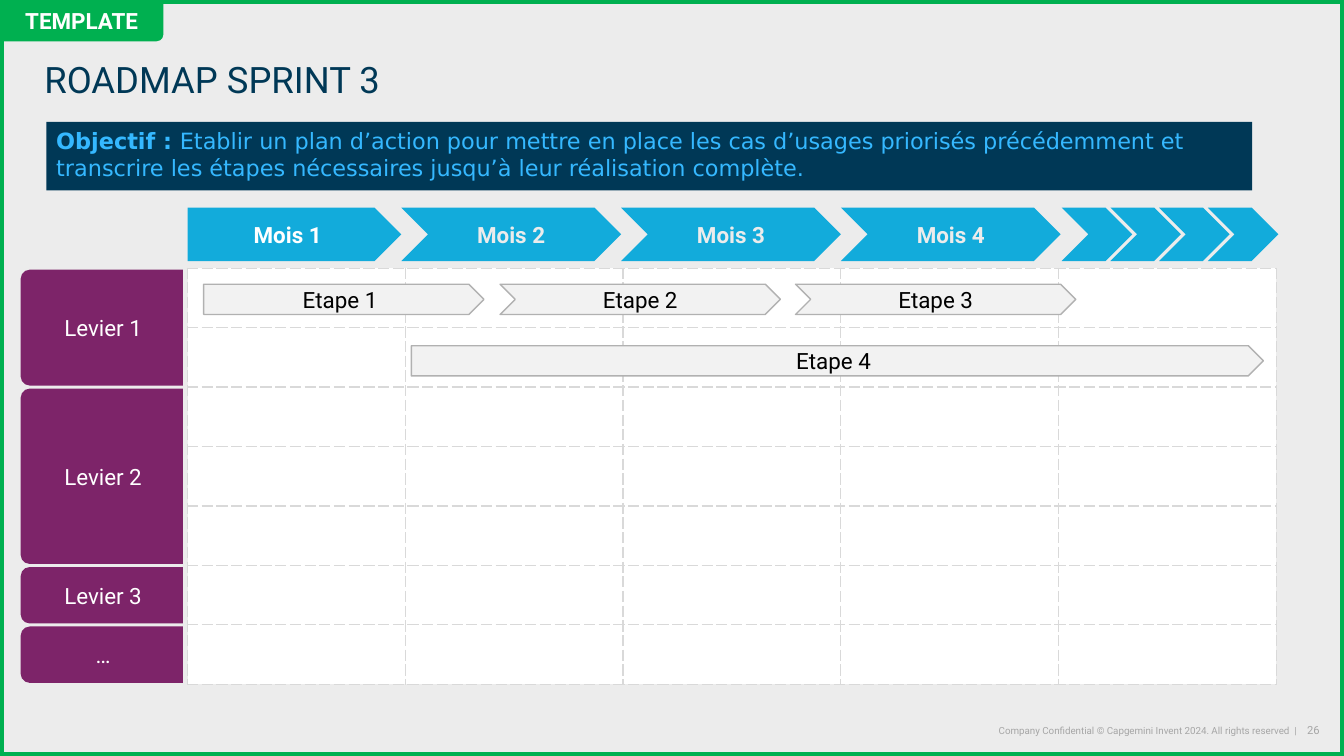
from lxml import etree
from pptx import Presentation
from pptx.dml.color import RGBColor
from pptx.enum.shapes import MSO_SHAPE
from pptx.enum.text import MSO_ANCHOR, PP_ALIGN
from pptx.oxml.ns import qn
from pptx.util import Inches, Pt

RECT, PLATE, CHEVRON = MSO_SHAPE.RECTANGLE, MSO_SHAPE.PENTAGON, MSO_SHAPE.CHEVRON
TAB, BADGE = MSO_SHAPE.ROUND_2_SAME_RECTANGLE, MSO_SHAPE.ROUND_2_DIAG_RECTANGLE
MIDDLE, TOP = MSO_ANCHOR.MIDDLE, MSO_ANCHOR.TOP
LEFT, CENTER, RIGHT = PP_ALIGN.LEFT, PP_ALIGN.CENTER, PP_ALIGN.RIGHT

THEME = dict(
    font="Roboto", objective_font="DejaVu Sans",
    title=26, body=16, page=8, legal=7,
    background="ECECEC", navy="003856", sky="35B8FF", cyan="12ABDB",
    purple="7D2469", green="00B050", white="FFFFFF", black="000000",
    step="F2F2F2", step_line="B1B1B1", grid="D9D9D9", footer="A6A6A6",
)
W, H = 13.33, 7.5
GRID_X, GRID_Y, COL, ROW, COLS, ROWS = 1.86, 2.66, 2.16, 0.59, 5, 7


def write(shape, runs, size, color, align=CENTER, anchor=MIDDLE, font="font", insets=None):
    """Fill a shape with one paragraph; runs is a list of (text, bold)."""
    tf = shape.text_frame
    tf.word_wrap, tf.vertical_anchor = True, anchor
    if insets is not None:
        tf.margin_left = tf.margin_right = Inches(insets[0])
        tf.margin_top = tf.margin_bottom = Inches(insets[1])
    p = tf.paragraphs[0]
    p.alignment = align
    for text, bold in runs:
        r = p.add_run()
        r.text = text
        for name, value in dict(name=THEME[font], size=Pt(THEME[size]), bold=bold).items():
            setattr(r.font, name, value)
        r.font.color.rgb = RGBColor.from_string(THEME[color])
    return p


def add(kind, x, y, w, h, fill=None, line=None, weight=1):
    """Add a preset shape with theme colours and no shadow."""
    sp = s.shapes.add_shape(kind, Inches(x), Inches(y), Inches(w), Inches(h))
    sp.shadow.inherit = False
    if fill:
        sp.fill.solid()
        sp.fill.fore_color.rgb = RGBColor.from_string(THEME[fill])
    else:
        sp.fill.background()
    if line:
        sp.line.color.rgb = RGBColor.from_string(THEME[line])
        sp.line.width = Pt(weight)
    else:
        sp.line.fill.background()
    return sp


prs = Presentation()
prs.slide_width, prs.slide_height = Inches(W), Inches(H)
s = prs.slides.add_slide(prs.slide_layouts[5])
s.background.fill.solid()
s.background.fill.fore_color.rgb = RGBColor.from_string(THEME["background"])

# Title
title = s.shapes.title
title.left, title.top, title.width, title.height = map(Inches, (0.44, 0.42, 11.97, 0.78))
p = write(title, [("ROADMAP SPRINT 3", False)], "title", "navy", LEFT, insets=(0, 0))
p.line_spacing = 0.9

# Footer
legal = "Company Confidential © Capgemini Invent 2024. All rights reserved\u00a0 |"
for text, x, w, size, anchor, inset in (
    ("26", 12.84, 0.25, "page", TOP, 0.05),
    (legal, 7.9, 4.96, "legal", MIDDLE, 0),
):
    sp = s.shapes.add_textbox(Inches(x), Inches(7.13), Inches(w), Inches(0.24))
    write(sp, [(text, False)], size, "footer", RIGHT, anchor, insets=(0, inset))

# Objective banner
objective = ("Etablir un plan d’action pour mettre en place les cas d’usages priorisés "
             "précédemment et transcrire les étapes nécessaires jusqu’à leur réalisation complète.")
sp = add(RECT, 0.46, 1.21, 11.96, 0.68, "navy")
write(sp, [("Objectif : ", True), (objective, False)], "body", "sky", LEFT, TOP,
      "objective_font")

# Planning grid with dashed borders
frame = s.shapes.add_table(ROWS, COLS, Inches(GRID_X), Inches(GRID_Y),
                           Inches(COL * COLS), Inches(ROW * ROWS))
table = frame.table
table.first_row = table.horz_banding = False
for column in table.columns:
    column.width = Inches(COL)
for row in table.rows:
    row.height = Inches(ROW)
for cell in table.iter_cells():
    tcPr = cell._tc.get_or_add_tcPr()
    for side in ("a:lnL", "a:lnR", "a:lnT", "a:lnB"):
        ln = etree.SubElement(tcPr, qn(side), w=str(Pt(1)))
        fill = etree.SubElement(ln, qn("a:solidFill"))
        etree.SubElement(fill, qn("a:srgbClr"), val=THEME["grid"])
        etree.SubElement(ln, qn("a:prstDash"), val="dash")
    cell.fill.solid()
    cell.fill.fore_color.rgb = RGBColor.from_string(THEME["white"])

# Lever tabs: turned a quarter left, with text turned back upright
TAB_W, TAB_CENTER, TAB_GAP = 1.61, 1.01, 0.03
first_row = 0
for label, span in (("Levier 1", 2), ("Levier 2", 3), ("Levier 3", 1), ("…", 1)):
    length = span * ROW - TAB_GAP
    middle = GRID_Y + (first_row + span / 2) * ROW
    sp = add(TAB, TAB_CENTER - length / 2, middle - TAB_W / 2, length, TAB_W, "purple")
    sp.rotation = 270
    sp.adjustments[0] = 0.09 / min(length, TAB_W)
    write(sp, [(label, False)], "body", "white")
    sp.text_frame._txBody.bodyPr.set("vert", "vert")
    first_row += span

# Month arrows, then the open-ended tail
MONTH_Y, MONTH_H, MONTH_W, FIRST_W = 2.06, 0.53, 2.18, 2.12
for i in range(4):
    x = GRID_X + FIRST_W + (i - 1) * MONTH_W if i else GRID_X
    sp = add(CHEVRON if i else PLATE, x, MONTH_Y, MONTH_W if i else FIRST_W, MONTH_H, "cyan")
    write(sp, [(f"Mois {i + 1}", True)], "body", "background" if i else "white")
for i in range(4):
    add(CHEVRON, 10.53 + i * 0.483, MONTH_Y, 0.7, MONTH_H, "cyan")

# Step arrows
for i, (kind, x, y, w) in enumerate((
    (PLATE, 2.02, 2.82, 2.78),
    (CHEVRON, 4.96, 2.82, 2.78),
    (CHEVRON, 7.89, 2.82, 2.78),
    (PLATE, 4.08, 3.43, 8.45),
), start=1):
    sp = add(kind, x, y, w, 0.3, "step", "step_line")
    write(sp, [(f"Etape {i}", False)], "body", "black")

# Slide frame and badge
add(RECT, 0, 0, W, H, line="green", weight=6)
sp = add(BADGE, 0, 0, 1.62, 0.41, "green")
write(sp, [("TEMPLATE", True)], "body", "white")

prs.save("out.pptx")
